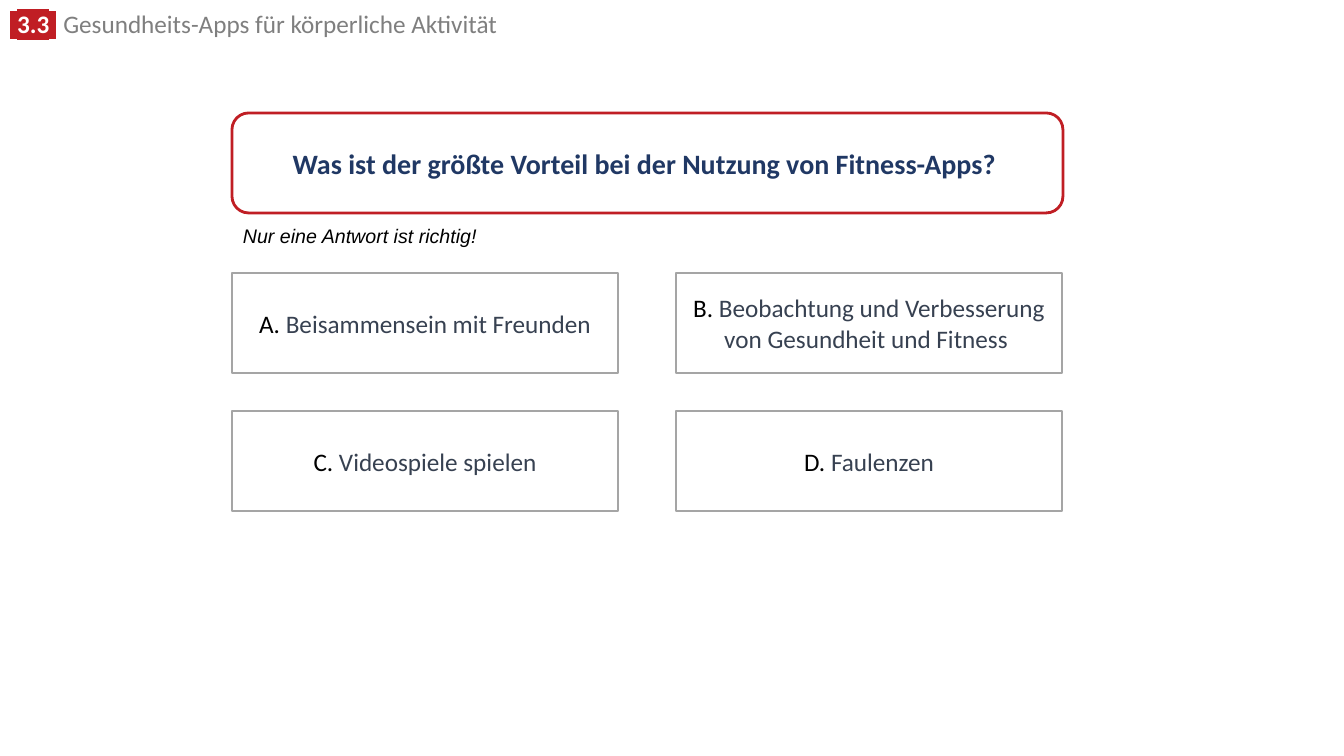
from lxml import etree
from pptx import Presentation
from pptx import util as u
from pptx.dml.color import RGBColor
from pptx.enum import shapes, text
from pptx.oxml.ns import qn

EMU_PER_PX = 914400 / 100.8
RED, WHITE, GREY, BLACK = "C01E24", "FFFFFF", "A5A5A5", "000000"
ANSWER_FONT = {"name": "Calibri", "size": u.Pt(18)}
ANSWERS = [
    ("A. ", "Beisammensein mit Freunden"),
    ("B. ", "Beobachtung und Verbesserung von Gesundheit und Fitness "),
    ("C. ", "Videospiele spielen"),
    ("D. ", "Faulenzen"),
]


def px(length):
    return u.Emu(round(length * EMU_PER_PX))


def rgb(value):
    return RGBColor.from_string(value)


def add_span(para, words, color, font):
    span = para.add_run()
    span.text = words
    for name, value in font.items():
        setattr(span.font, name, value)
    span.font.color.rgb = rgb(color)
    return span


def highlight(span, color):
    mark = etree.Element(qn("a:highlight"))
    etree.SubElement(mark, qn("a:srgbClr")).set("val", color)
    span.font.fill  # the highlight must follow the text fill
    span._r.rPr.find(qn("a:solidFill")).addnext(mark)


def add_title(page):
    title = page.shapes.title
    place = {"left": px(0), "top": px(9), "width": px(960), "height": px(35)}
    for name, value in place.items():
        setattr(title, name, value)
    frame = title.text_frame
    frame.auto_size = text.MSO_AUTO_SIZE.SHAPE_TO_FIT_TEXT
    frame.vertical_anchor = text.MSO_ANCHOR.TOP
    para = frame.paragraphs[0]
    para.alignment = text.PP_ALIGN.LEFT
    para.line_spacing = 0.8
    para.space_before = u.Pt(0)
    font = {"size": u.Pt(18), "bold": True}
    for words, name in ((" ", "Arial"), ("3.3", "Calibri"), (" ", "Arial")):
        highlight(add_span(para, words, WHITE, {**font, "name": name}), RED)
    font["bold"] = False
    for words, name in ((" ", "Arial"),
                        ("Gesundheits-Apps für körperliche Aktivität", "Calibri")):
        add_span(para, words, "7F7F7F", {**font, "name": name})


def add_box(page, kind, left, top, width, line_color):
    """Add a white outlined box and return its centred paragraph."""
    box = page.shapes.add_shape(kind, px(left), px(top), px(width), px(100))
    box.shadow.inherit = False
    box.fill.solid()
    box.fill.fore_color.rgb = rgb(WHITE)
    box.line.color.rgb = rgb(line_color)
    box.line.width = u.Pt(2)
    frame = box.text_frame
    frame.word_wrap = True
    frame.vertical_anchor = text.MSO_ANCHOR.MIDDLE
    para = frame.paragraphs[0]
    para.alignment = text.PP_ALIGN.CENTER
    return para


def add_hint(page):
    box = page.shapes.add_textbox(px(233), px(219), px(259), px(34))
    box.text_frame.word_wrap = False
    box.text_frame.auto_size = text.MSO_AUTO_SIZE.SHAPE_TO_FIT_TEXT
    add_span(box.text_frame.paragraphs[0], "Nur eine Antwort ist richtig!", BLACK,
             {"name": "Arial", "size": u.Pt(14), "italic": True})


def main():
    deck = Presentation()
    deck.slide_width, deck.slide_height = px(1344), px(756)
    page = deck.slides.add_slide(deck.slide_layouts[5])

    # Header and question
    add_title(page)
    question = add_box(page, shapes.MSO_SHAPE.ROUNDED_RECTANGLE, 232, 113, 831, RED)
    add_span(question, "Was ist der größte Vorteil bei der Nutzung von Fitness-Apps? ",
             "203864", {"name": "Calibri", "size": u.Pt(20), "bold": True})
    add_hint(page)

    # Answers in a grid of two columns
    for index, (letter, answer) in enumerate(ANSWERS):
        row, column = divmod(index, 2)
        para = add_box(page, shapes.MSO_SHAPE.RECTANGLE,
                       232 + 444 * column, 273 + 138 * row, 386, GREY)
        add_span(para, letter, BLACK, ANSWER_FONT)
        add_span(para, answer, "374151", ANSWER_FONT)

    deck.save("out.pptx")


if __name__ == "__main__":
    main()
